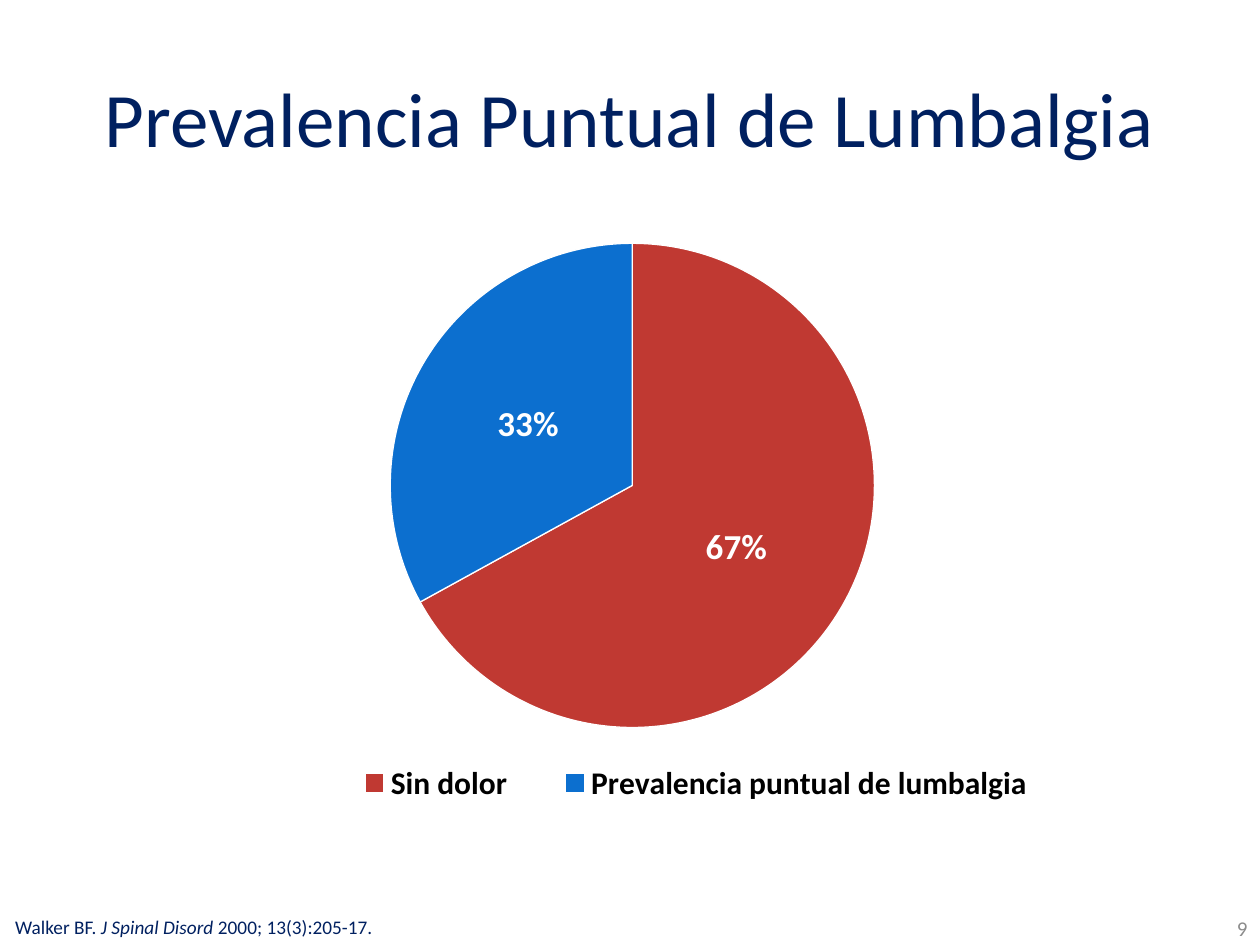
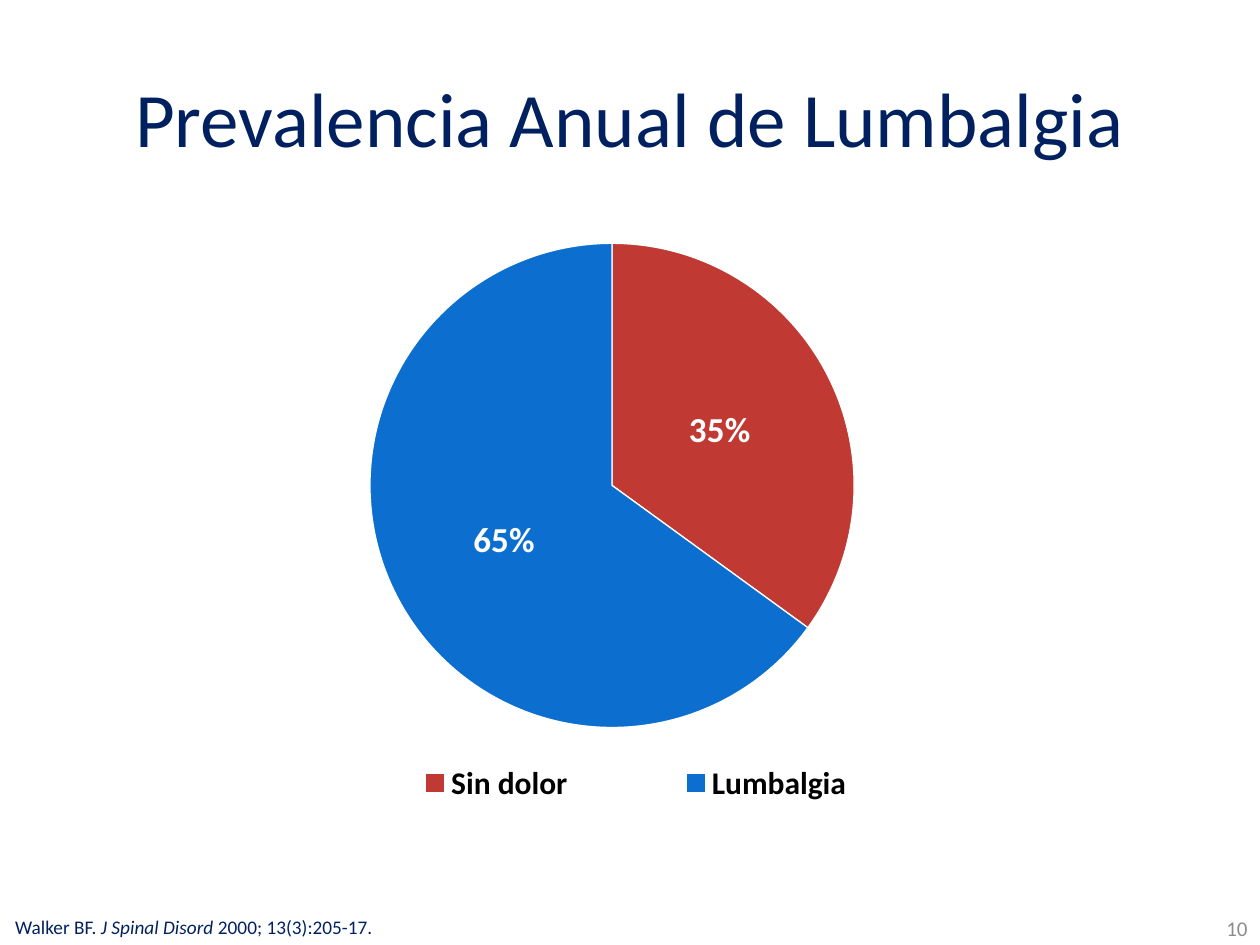
"""Builds two slides with pie charts on the prevalence of low back pain."""
from lxml.etree import SubElement
from pptx import Presentation
from pptx.chart.data import CategoryChartData
from pptx.dml.color import RGBColor
from pptx.enum.chart import XL_CHART_TYPE as ChartType
from pptx.enum.chart import XL_LABEL_POSITION as LabelPosition
from pptx.enum.chart import XL_LEGEND_POSITION as LegendPosition
from pptx.enum.text import MSO_ANCHOR as Anchor
from pptx.enum.text import PP_ALIGN as Align
from pptx.oxml.ns import qn
from pptx.util import Inches, Pt

COLOURS = {"navy": "002060", "red": "C03932", "blue": "0C6FCF",
           "grey": "8C8C8C", "white": "FFFFFF", "black": "000000"}
FONT = "Calibri"
CITATION = [("Walker BF. ", False), ("J Spinal Disord ", True),
            ("2000; 13(3):205-17.", False)]
PIES = [
    {"number": 9, "title": "Prevalencia Puntual de Lumbalgia",
     "values": {"Sin dolor": 67, "Prevalencia puntual de lumbalgia": 33},
     "plot_left": 0.299, "legend_width": 0.636},
    {"number": 10, "title": "Prevalencia Anual de Lumbalgia",
     "values": {"Sin dolor": 35, "Lumbalgia": 65},
     "plot_left": 0.282, "legend_width": 0.535},
]


def colour(name):
    return RGBColor.from_string(COLOURS[name])


def style_font(font, size, colour_name, **options):
    for key, value in {"name": FONT, "size": Pt(size), **options}.items():
        setattr(font, key, value)
    font.color.rgb = colour(colour_name)


def place(shape, left, top, width, height):
    lengths = {"left": left, "top": top, "width": width, "height": height}
    for key, value in lengths.items():
        setattr(shape, key, Inches(value))


def write(frame, spans, size, colour_name, align, anchor):
    frame.word_wrap = True
    frame.vertical_anchor = anchor
    para = frame.paragraphs[0]
    para.alignment = align
    for text, italic in spans:
        span = para.add_run()
        span.text = text
        style_font(span.font, size, colour_name, italic=italic)


def add_title(page, text):
    title = page.shapes.title
    place(title, 0.5, 0.3, 9, 1.25)
    write(title.text_frame, [(text, False)], 44, "navy",
          Align.CENTER, Anchor.MIDDLE)


def add_citation(page):
    box = page.shapes.add_textbox(0, 0, 0, 0)
    place(box, 0.12, 7.26, 9.48, 0.19)
    for side in ("left", "top", "right", "bottom"):
        setattr(box.text_frame, f"margin_{side}", 0)
    write(box.text_frame, CITATION, 11, "navy", Align.LEFT, Anchor.BOTTOM)


def add_page_number(page, number):
    box = page.shapes.add_textbox(0, 0, 0, 0)
    place(box, 7.92, 7.27, 2.08, 0.19)
    write(box.text_frame, [(str(number), False)], 12, "grey",
          Align.RIGHT, Anchor.MIDDLE)


def set_layout(parent, after, fractions, inner=False):
    for old in parent.findall(qn("c:layout")):
        parent.remove(old)
    layout = SubElement(parent, qn("c:layout"))
    manual = SubElement(layout, qn("c:manualLayout"))
    settings = {"layoutTarget": "inner"} if inner else {}
    settings.update(xMode="edge", yMode="edge")
    settings.update(zip("xywh", map(str, fractions)))
    for tag, value in settings.items():
        SubElement(manual, qn(f"c:{tag}")).set("val", value)
    if after is None:
        parent.insert(0, layout)
    else:
        after.addnext(layout)


def add_legend(chart, width):
    chart.has_legend = True
    legend = chart.legend
    legend.position = LegendPosition.BOTTOM
    legend.include_in_layout = False
    style_font(legend.font, 18, "black", bold=True)
    element = chart.element.find(f".//{qn('c:legend')}")
    set_layout(element, element.find(qn("c:legendPos")),
               (0.238, 0.86, width, 0.08))


def style_slices(series):
    for index, name in enumerate(("red", "blue")):
        form = series.points[index].format
        form.fill.solid()
        form.fill.fore_color.rgb = colour(name)
        form.line.color.rgb = colour("white")
        form.line.width = Pt(0.75)


def add_labels(series):
    labels = series.data_labels
    options = {"show_value": True, "number_format": '#,##0"%"',
               "number_format_is_linked": False,
               "position": LabelPosition.CENTER}
    for key, value in options.items():
        setattr(labels, key, value)
    style_font(labels.font, 20, "white", bold=True)


def add_pie(page, values, plot_left, legend_width):
    chart_data = CategoryChartData()
    chart_data.categories = list(values)
    chart_data.add_series("Series 1", list(values.values()))
    frame = page.shapes.add_chart(
        ChartType.PIE, Inches(0.27), Inches(1.39),
        Inches(9.45), Inches(5.36), chart_data)
    chart = frame.chart
    chart.has_title = False
    style_font(chart.font, 16, "black")
    chart.plots[0].vary_by_categories = True
    series = chart.plots[0].series[0]
    style_slices(series)
    add_labels(series)
    add_legend(chart, legend_width)
    set_layout(chart.element.find(f".//{qn('c:plotArea')}"), None,
               (plot_left, 0.101, 0.407, 0.717), inner=True)


def main():
    deck = Presentation()
    deck.slide_width, deck.slide_height = Inches(10), Inches(7.5)
    for pie in PIES:
        page = deck.slides.add_slide(deck.slide_layouts[5])
        add_title(page, pie["title"])
        add_pie(page, pie["values"], pie["plot_left"], pie["legend_width"])
        add_citation(page)
        add_page_number(page, pie["number"])
    deck.save("out.pptx")


if __name__ == "__main__":
    main()
